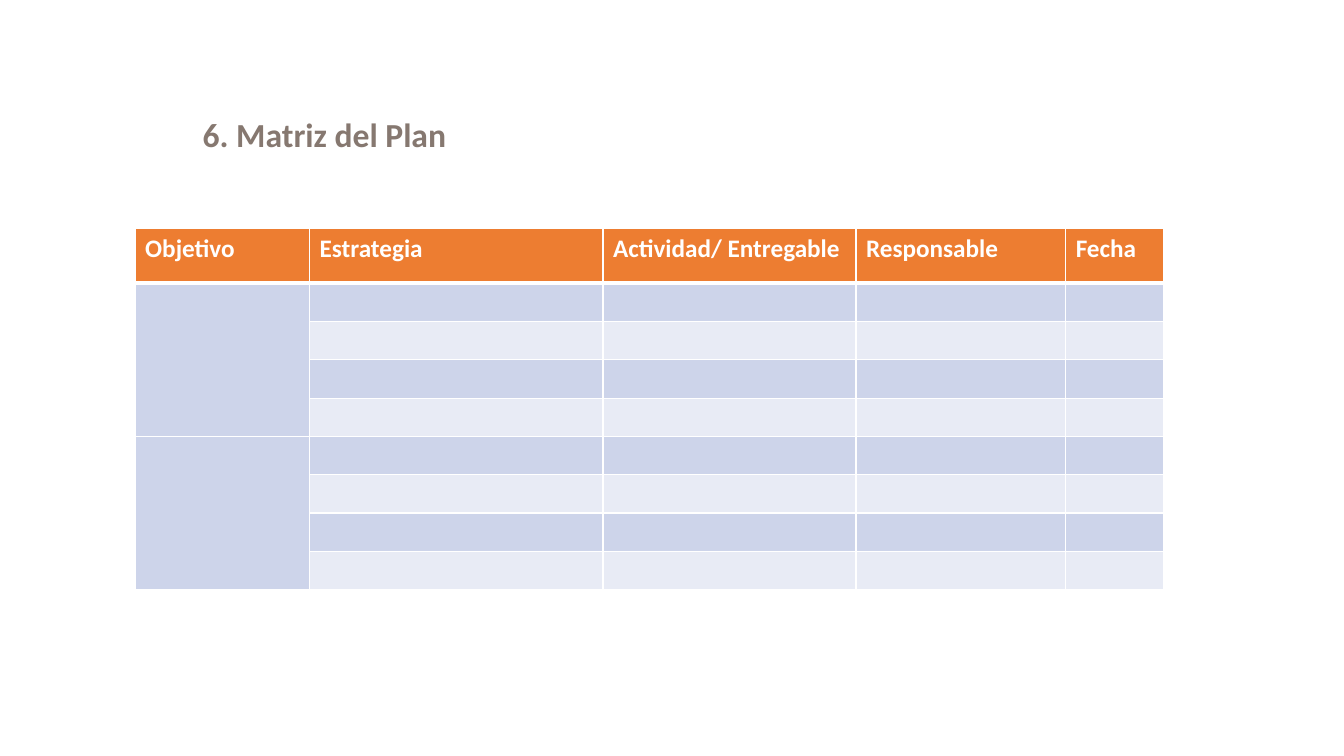
from lxml.etree import SubElement
from pptx import Presentation
from pptx.dml.color import RGBColor
from pptx.oxml.ns import qn
from pptx.util import Inches, Pt

COLS = [1.73, 2.91, 2.51, 2.08, 0.97]
HEADER_H, ROW_H = 0.54, 0.38
GROUPS, GROUP_ROWS = 2, 4
HEADERS = ["Objetivo", "Estrategia", "Actividad/ Entregable", "Responsable", "Fecha"]
HEADER_FILL, BANDS = "ED7D31", ["CDD4EA", "E8EBF5"]
WHITE, TITLE_COLOR = "FFFFFF", "867870"


def rgb(value):
    return RGBColor.from_string(value)


def write(tf, text, size, color):
    r = tf.paragraphs[0].add_run()
    r.text = text
    for name, value in {"name": "Calibri", "size": Pt(size), "bold": True}.items():
        setattr(r.font, name, value)
    r.font.color.rgb = rgb(color)


def add_title(s, text):
    tf = s.shapes.add_textbox(Inches(1.67), Inches(1.08), Inches(9.57), Inches(0.5)).text_frame
    for name, value in {"word_wrap": True, "margin_left": Inches(0.34)}.items():
        setattr(tf, name, value)
    write(tf, text, 24, TITLE_COLOR)


def set_borders(cell, top, bottom):
    tc_pr = cell._tc.get_or_add_tcPr()
    for side, width in {"L": 1, "R": 1, "T": top, "B": bottom}.items():
        ln = SubElement(tc_pr, qn(f"a:ln{side}"), w=str(Pt(width)))
        SubElement(SubElement(ln, qn("a:solidFill")), qn("a:srgbClr"), val=WHITE)


def format_cell(cell, row, fill):
    set_borders(cell, 3 if row == 1 else 1, 3 if row == 0 else 1)
    cell.fill.solid()
    cell.fill.fore_color.rgb = rgb(fill)


def add_matrix(s):
    body_rows = GROUPS * GROUP_ROWS
    height = HEADER_H + body_rows * ROW_H
    table = s.shapes.add_table(body_rows + 1, len(COLS), Inches(1.34), Inches(2.27),
                               Inches(sum(COLS)), Inches(height)).table
    for col, width in zip(table.columns, COLS):
        col.width = Inches(width)
    for i, row in enumerate(table.rows):
        row.height = Inches(ROW_H if i else HEADER_H)
        for j, cell in enumerate(row.cells):
            if i == 0:
                format_cell(cell, i, HEADER_FILL)
                write(cell.text_frame, HEADERS[j], 18, WHITE)
            else:
                format_cell(cell, i, BANDS[(i - 1) % 2 if j else 0])
                cell.margin_top = cell.margin_bottom = 0
    for group in range(GROUPS):
        first = 1 + group * GROUP_ROWS
        table.cell(first, 0).merge(table.cell(first + GROUP_ROWS - 1, 0))


def main():
    prs = Presentation()
    prs.slide_width, prs.slide_height = Inches(13.33), Inches(7.5)
    s = prs.slides.add_slide(prs.slide_layouts[6])
    add_matrix(s)
    add_title(s, "6. Matriz del Plan")
    prs.save("out.pptx")


if __name__ == "__main__":
    main()
